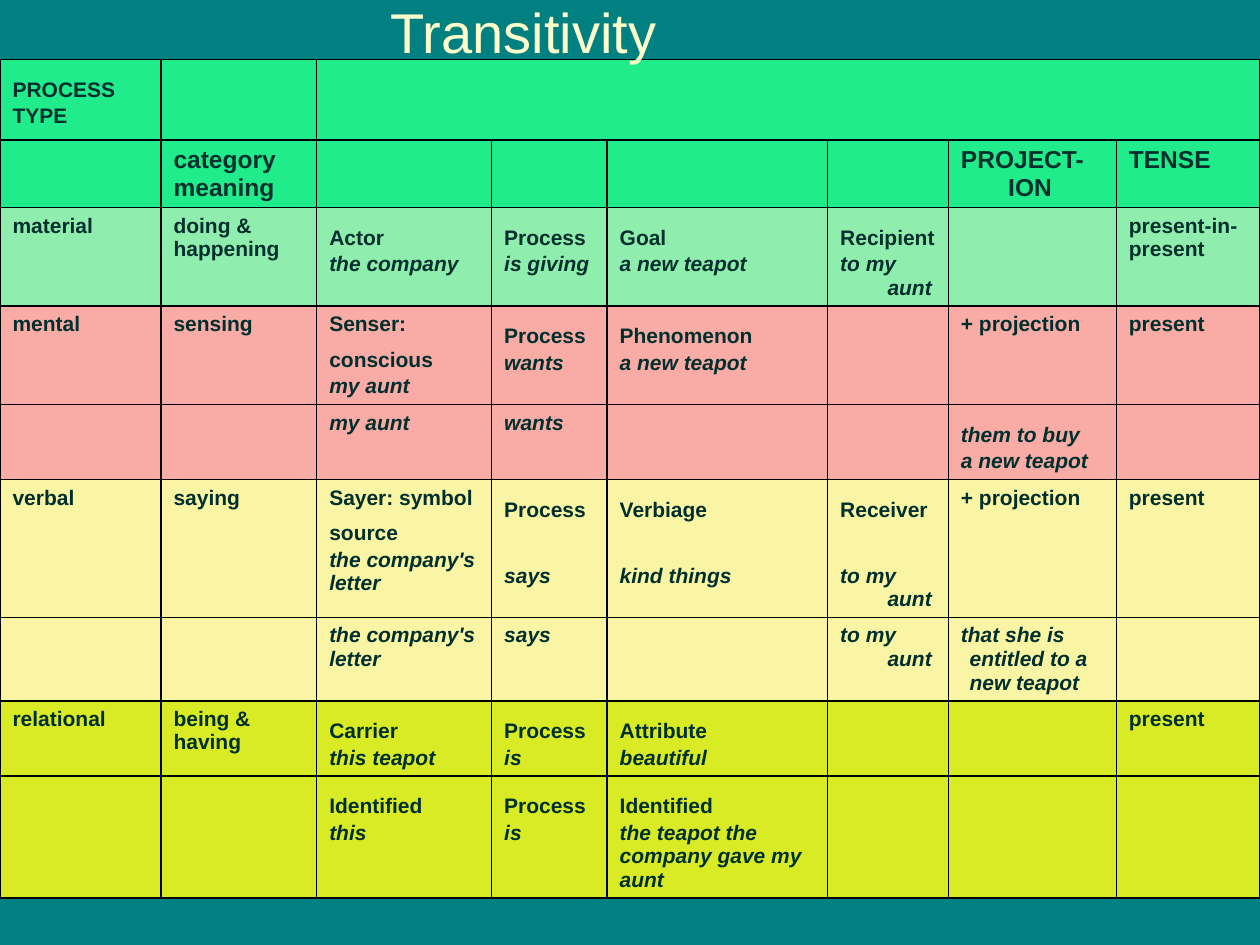
from pptx import Presentation
from pptx.dml.color import RGBColor
from pptx.enum.text import MSO_ANCHOR, PP_ALIGN
from pptx.oxml.ns import qn
from pptx.util import Pt
from lxml.etree import SubElement

TEAL = RGBColor(0x00, 0x80, 0x80)
CREAM = RGBColor(0xFF, 0xFF, 0xCC)
INK = RGBColor(0x00, 0x2F, 0x2E)
GREEN = RGBColor(0x20, 0xEC, 0x8B)
MINT = RGBColor(0x8F, 0xED, 0xAE)
PINK = RGBColor(0xF9, 0xAB, 0xA5)
SAND = RGBColor(0xF9, 0xF5, 0xA5)
LIME = RGBColor(0xD8, 0xEB, 0x25)

PLAIN = {"name": "Arial", "size": Pt(12), "bold": True}
LARGE = {**PLAIN, "size": Pt(14)}
SPACER = {"name": "Times New Roman", "size": Pt(20), "bold": True}
HEAD = {"name": "Arial", "size": Pt(32), "bold": False}

COLS = [92, 89, 100, 66, 126, 69, 96, 82]
HANG, NARROW, GAP = 27, 5, 22.5

# Cell marks: "|" new paragraph, "*" italic, "~" no hanging indent,
# "^" narrow hanging indent, "+|" wide gap before the next paragraph
ROWS = [
    (46, GREEN, PLAIN, ["PROCESS|TYPE"] + [""] * 7),
    (32, GREEN, LARGE, ["", "~category meaning", "", "", "", "", "PROJECT-ION", "TENSE"]),
    (44, MINT, PLAIN, ["material", "~doing & happening", "Actor|*the company",
                       "Process|*is giving", "Goal|*a new teapot",
                       "Recipient|*to my aunt", "", "~present-in-present"]),
    (38, PINK, PLAIN, ["mental", "sensing", "~Senser: conscious|*my aunt",
                       "Process|*wants", "Phenomenon|*a new teapot", "",
                       "+ projection", "present"]),
    (35, PINK, PLAIN, ["", "", "*my aunt", "*wants", "", "",
                       "*them to buy|*a new teapot", ""]),
    (55, SAND, PLAIN, ["verbal", "saying", "~Sayer: symbol source|*the company's letter",
                       "Process+|*says", "Verbiage+|*kind things",
                       "Receiver+|*to my aunt", "+ projection", "present"]),
    (37, SAND, PLAIN, ["", "", "~*the company's letter", "*says", "", "*to my aunt",
                       "^*that she is entitled to a new teapot", ""]),
    (35, LIME, PLAIN, ["relational", "~being & having", "~Carrier|*this teapot",
                       "Process|*is", "Attribute|*beautiful", "", "", "present"]),
    (61, LIME, PLAIN, ["", "", "Identified|*this", "Process|*is",
                       "~Identified|*the teapot the company gave my aunt", "", "", ""]),
]


def style(font, color, look):
    for key, val in look.items():
        setattr(font, key, val)
    font.color.rgb = color


def add_run(para, text, look, slant=False):
    run = para.add_run()
    run.text = text
    style(run.font, INK, {**look, "italic": slant})


def indent(para, size):
    props = para._p.get_or_add_pPr()
    props.set("marL", str(Pt(size)))
    props.set("indent", str(-Pt(size)))


def border(cell):
    props = cell._tc.get_or_add_tcPr()
    for spot, side in enumerate(("lnL", "lnR", "lnT", "lnB")):
        line = props.makeelement(qn("a:" + side), {"w": str(Pt(1))})
        fill = SubElement(line, qn("a:solidFill"))
        SubElement(fill, qn("a:srgbClr"), val="000000")
        props.insert(spot, line)


def fill_cell(cell, mark, color, look):
    cell.fill.solid()
    cell.fill.fore_color.rgb = color
    border(cell)
    if not mark:
        return
    size = {"~": 0, "^": NARROW}.get(mark[0], HANG)
    lines = mark.lstrip("~^").split("|")
    wide = lines[0].endswith("+")
    for num, line in enumerate(lines):
        frame = cell.text_frame
        para = frame.add_paragraph() if num else frame.paragraphs[0]
        indent(para, size)
        if num and wide:
            para.space_before = Pt(GAP)
        add_run(para, line.strip("*").rstrip("+"), look, line.startswith("*"))
        # A taller space sets the height of a heading line
        if num < len(lines) - 1:
            add_run(para, " ", SPACER)


def add_title(slide, left, top, width, height):
    title = slide.shapes.title
    box = {"left": left, "top": top, "width": width, "height": height}
    for key, val in box.items():
        setattr(title, key, Pt(val))
    frame = title.text_frame
    frame.text = "Transitivity"
    frame.vertical_anchor = MSO_ANCHOR.MIDDLE
    para = frame.paragraphs[0]
    para.alignment = PP_ALIGN.LEFT
    style(para.runs[0].font, CREAM, HEAD)


def add_grid(slide, left, top):
    high = sum(row[0] for row in ROWS)
    table = slide.shapes.add_table(len(ROWS), len(COLS), Pt(left), Pt(top),
                                   Pt(sum(COLS)), Pt(high)).table
    table.first_row = table.horz_banding = False
    for col, width in zip(table.columns, COLS):
        col.width = Pt(width)
    for row, (height, color, look, marks) in zip(table.rows, ROWS):
        row.height = Pt(height)
        for cell, mark in zip(row.cells, marks):
            fill_cell(cell, mark, color, look)
    table.cell(0, 2).merge(table.cell(0, len(COLS) - 1))


def main():
    deck = Presentation()
    deck.slide_width, deck.slide_height = Pt(720), Pt(540)
    slide = deck.slides.add_slide(deck.slide_layouts[5])
    slide.background.fill.solid()
    slide.background.fill.fore_color.rgb = TEAL
    add_grid(slide, 0, 34)
    add_title(slide, 216, 0, 306, 36)
    # Keep the title in front of the table
    tree = slide.shapes._spTree
    tree.append(slide.shapes.title._element)
    deck.save("out.pptx")


if __name__ == "__main__":
    main()
